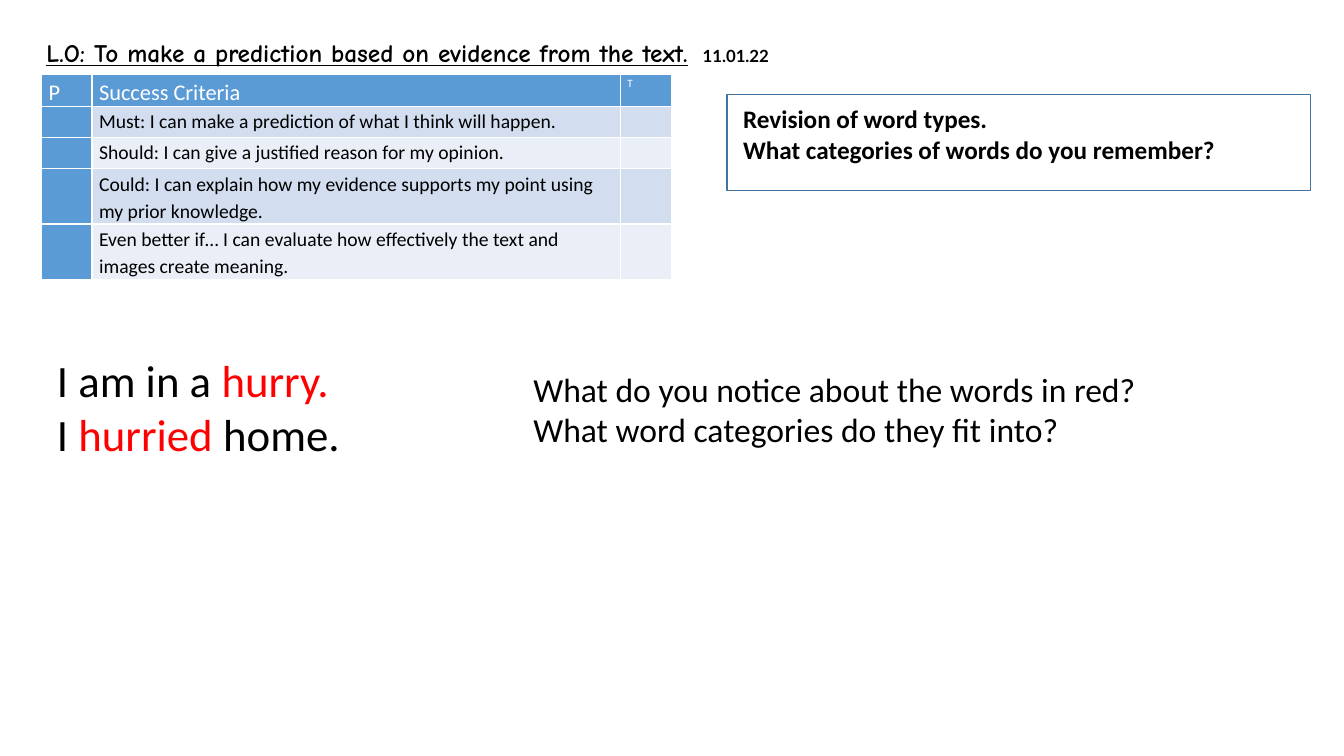
from pptx import Presentation
from pptx import util as u
from pptx.dml.color import RGBColor
from pptx.enum import shapes, text
from lxml import etree

COLOURS = {
    "black": "000000", "white": "FFFFFF", "red": "FF0000", "outline": "43739E",
    "header": "5B9BD5", "band dark": "D2DEEF", "band light": "EAEFF7",
}

presentation = Presentation()
presentation.slide_width = u.Inches(13.33)
presentation.slide_height = u.Inches(7.5)
slide = presentation.slides.add_slide(presentation.slide_layouts[5])


def share(left, top, width, height):
    across, down = presentation.slide_width / 100, presentation.slide_height / 100
    return [int(part * unit) for part, unit in
            zip((left, top, width, height), (across, down, across, down))]


def add_text(paragraph, words, size=18, font="Calibri", colour="black",
             bold=False, underline=False, tracking=0):
    run = paragraph.add_run()
    run.text = words
    run.font.size = u.Pt(size)
    run.font.name = font
    run.font.bold = bold
    run.font.underline = underline
    run.font.color.rgb = RGBColor.from_string(COLOURS[colour])
    if tracking:
        run.font._element.set("spc", str(tracking * 100))


title = slide.shapes.title
title.left, title.top, title.width, title.height = share(2.7, 4.27, 68.5, 5.33)
title.text_frame.word_wrap = True
title.text_frame.auto_size = text.MSO_AUTO_SIZE.NONE
title.text_frame.vertical_anchor = text.MSO_ANCHOR.MIDDLE
heading = title.text_frame.paragraphs[0]
heading.alignment = text.PP_ALIGN.LEFT
add_text(heading, "L.O: To make a prediction based on evidence from the text.",
         font="Comic Neue", bold=True, underline=True)
add_text(heading, " ", font="Comic Neue", bold=True, tracking=4)
add_text(heading, "11.01.22", size=12, font="Lato", bold=True)

criteria = [
    "Success Criteria",
    "Must: I can make a prediction of what I think will happen.",
    "Should: I can give a justified reason for my opinion.",
    "Could: I can explain how my evidence supports my point using my prior knowledge.",
    "Even better if… I can evaluate how effectively the text and images create meaning.",
]
column_shares = [3.75, 39.3, 3.83]
row_shares = [4.15, 4.15, 4.15, 7.3, 7.3]
table = slide.shapes.add_table(
    len(criteria), len(column_shares),
    *share(3.1, 9.87, sum(column_shares), sum(row_shares))).table
for column, width in zip(table.columns, column_shares):
    column.width = int(presentation.slide_width * width / 100)

for row_index, (row, height) in enumerate(zip(table.rows, row_shares)):
    row.height = int(presentation.slide_height * height / 100)
    is_header = row_index == 0
    band = "band dark" if row_index % 2 else "band light"
    labels = ["P" if is_header else "", criteria[row_index], "T" if is_header else ""]
    for column_index, (cell, label) in enumerate(zip(row.cells, labels)):
        cell.margin_left = cell.margin_right = u.Inches(0.07)
        cell.margin_top = cell.margin_bottom = 0
        cell.fill.solid()
        fill = "header" if is_header or column_index == 0 else band
        cell.fill.fore_color.rgb = RGBColor.from_string(COLOURS[fill])
        paragraph = cell.text_frame.paragraphs[0]
        paragraph.line_spacing = 1.15
        if not label:
            end = etree.SubElement(
                paragraph._p, "{http://schemas.openxmlformats.org/drawingml/2006/main}endParaRPr")
            end.set("sz", "1200")
            continue
        if row_index in (1, 2):
            paragraph.space_before = paragraph.space_after = u.Pt(2)
        size = 8 if label == "T" else 16 if is_header else 14
        add_text(paragraph, label, size=size, colour="white" if is_header else "black")

revision_box = slide.shapes.add_shape(
    shapes.MSO_SHAPE.RECTANGLE, *share(54.1, 12.53, 43.4, 12.67))
revision_box.shadow.inherit = False
revision_box.fill.background()
revision_box.line.color.rgb = RGBColor.from_string(COLOURS["outline"])
revision_box.line.width = u.Pt(1)

text_blocks = [
    (share(54.55, 13.07, 41, 9.47), 18, True, [
        [("Revision of word types.", "black")],
        [("What categories of words do you remember?", "black")]]),
    (share(3.5, 46, 26, 15.73), 32, False, [
        [("I am in a ", "black"), ("hurry.", "red")],
        [("I ", "black"), ("hurried", "red"), (" home.", "black")]]),
    (share(38.95, 48.13, 50.2, 12.13), 24, False, [
        [("What do you notice about the words in red? "
          "What word categories do they fit into?", "black")]]),
]
for place, size, bold, lines in text_blocks:
    frame = slide.shapes.add_textbox(*place).text_frame
    frame.word_wrap = True
    for line_index, line in enumerate(lines):
        paragraph = frame.add_paragraph() if line_index else frame.paragraphs[0]
        for words, colour in line:
            add_text(paragraph, words, size=size, colour=colour, bold=bold)

presentation.save("out.pptx")
